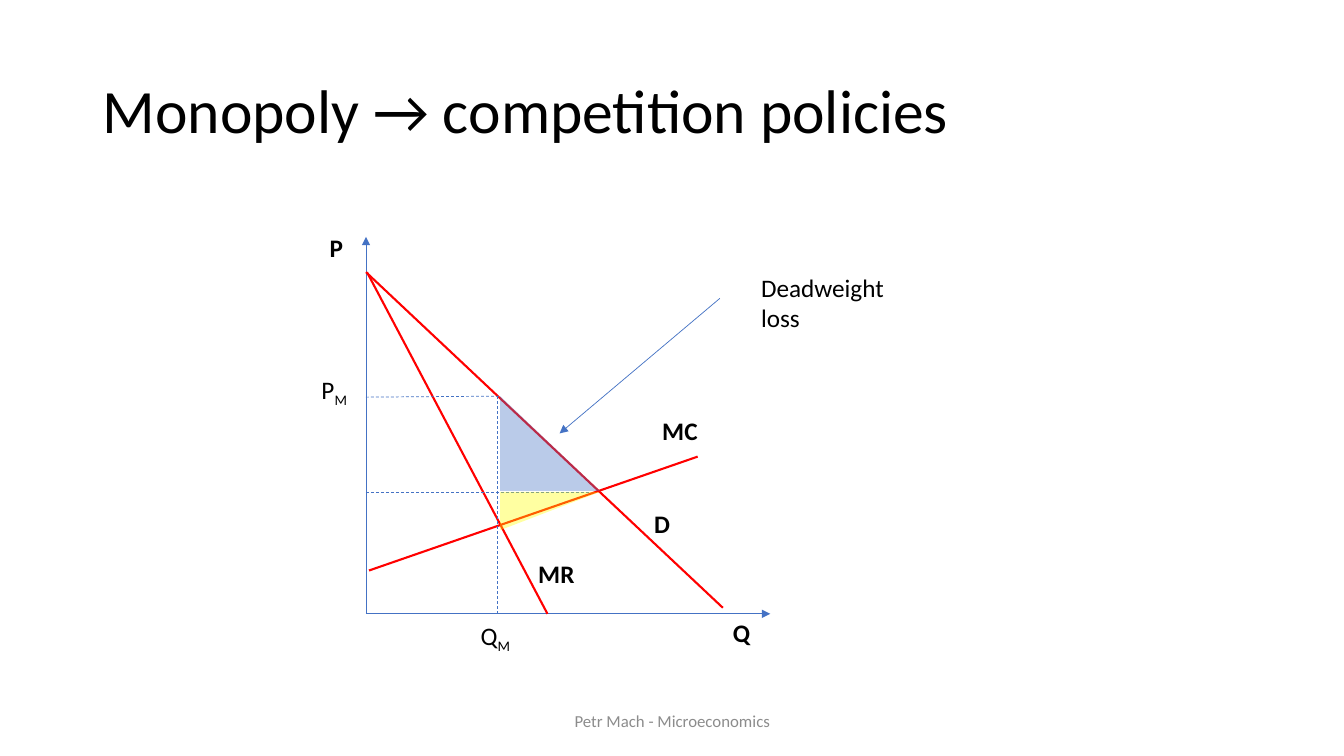
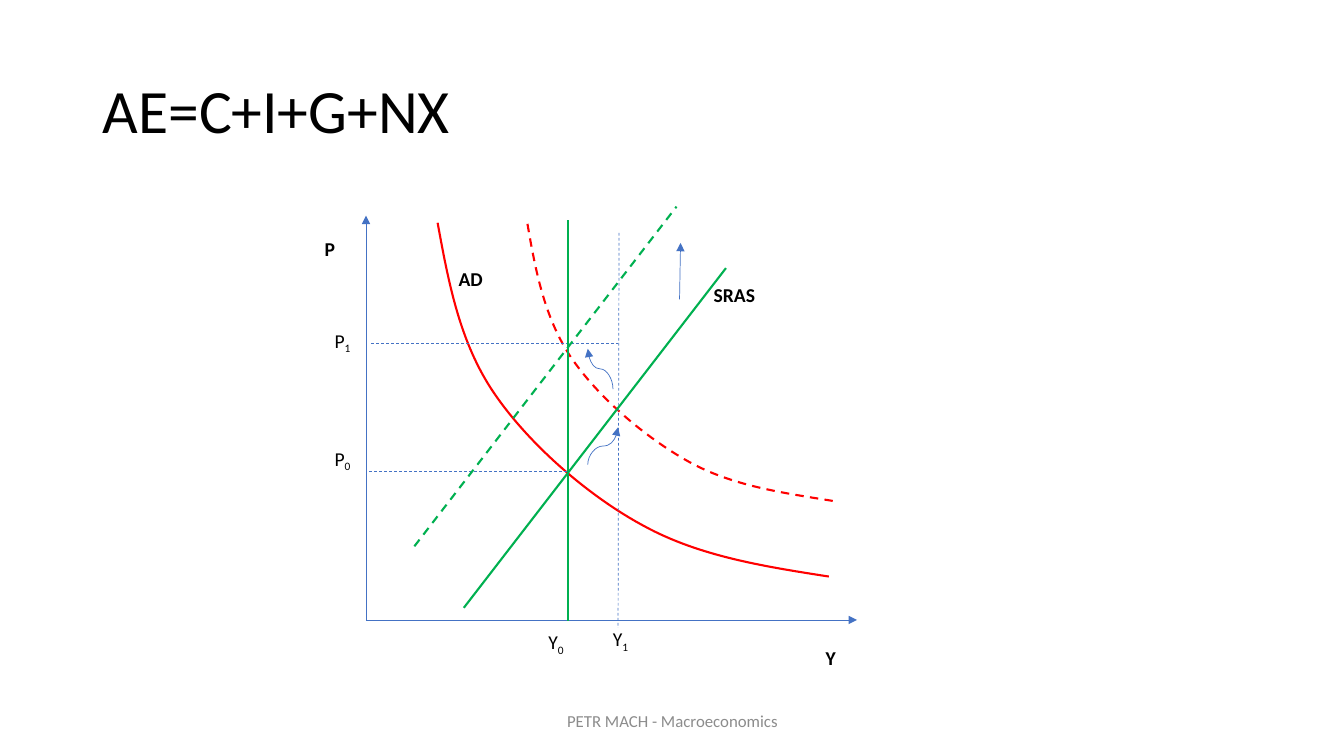
from pptx import Presentation
from pptx.dml.color import RGBColor
from pptx.enum.dml import MSO_LINE_DASH_STYLE as Dash
from pptx.enum.shapes import MSO_CONNECTOR as Link, MSO_SHAPE as Preset
from pptx.enum.text import MSO_ANCHOR as Anchor, PP_ALIGN as Align
from pptx.oxml.ns import qn
from pptx.util import Inches, Pt
from lxml.etree import SubElement

FONT = "Calibri"
BLACK, WHITE, GRAY = "000000", "FFFFFF", "8C8C8C"
BLUE, RED, GREEN, YELLOW = "4472C4", "FF0000", "00B050", "FFFF00"
THIN, THICK = 0.5, 1.5


def rgb(color):
    """Turn a hex string into a colour."""
    return RGBColor.from_string(color)


def add_text(slide, text, left, top, width, height, size=18, color=BLACK, bold=False,
             align=Align.LEFT, anchor=Anchor.TOP, spacing=1.0, fill=None):
    """Write one paragraph; what follows an underscore is a subscript."""
    box = slide.shapes.add_textbox(*map(Inches, (left, top, width, height)))
    if fill:
        box.fill.solid()
        box.fill.fore_color.rgb = rgb(fill)
    frame = box.text_frame
    frame.word_wrap = True
    frame.vertical_anchor = anchor
    paragraph = frame.paragraphs[0]
    paragraph.alignment = align
    paragraph.line_spacing = spacing
    for level, part in enumerate(text.split("_")):
        run = paragraph.add_run()
        run.text = part
        run.font.name, run.font.size, run.font.bold = FONT, Pt(size), bold
        run.font.color.rgb = rgb(color)
        if level:
            run.font._element.set("baseline", "-25000")


def style_line(line, color, width, dash=None, arrow=False):
    """Set colour, width, dash and arrowhead of a line."""
    line.color.rgb = rgb(color)
    line.width = Pt(width)
    if dash:
        line.dash_style = dash
    if arrow:
        SubElement(line._get_or_add_ln(), qn("a:tailEnd"), type="triangle")


def add_line(slide, start, end, color=BLUE, width=THIN, dash=None, arrow=False, kind=Link.STRAIGHT):
    """Draw a connector between two points."""
    connector = slide.shapes.add_connector(kind, *map(Inches, (*start, *end)))
    style_line(connector.line, color, width, dash, arrow)
    SubElement(connector._element.spPr, qn("a:effectLst"))
    return connector


def add_bent_arrow(slide, start, end):
    """Draw a curved arrow that leaves and arrives vertically."""
    (x1, y1), (x2, y2) = start, end
    mid_x, mid_y = (x1 + x2) / 2, (y1 + y2) / 2
    half_x, half_y = (y2 - y1) / 2, (x1 - x2) / 2
    arrow = add_line(slide, (mid_x - half_x, mid_y - half_y), (mid_x + half_x, mid_y + half_y),
                     arrow=True, kind=Link.CURVE)
    arrow._element.spPr.find(qn("a:xfrm")).set("rot", "5400000")


def add_curve(slide, points, color, dash=None):
    """Draw a chain of cubic curves as one open outline."""
    start, *rest = [tuple(map(Inches, point)) for point in points]
    builder = slide.shapes.build_freeform(*start)
    builder.add_line_segments(rest, close=False)
    curve = builder.convert_to_shape()
    segments = list(curve._element.spPr.iter(qn("a:lnTo")))
    outline = segments[0].getparent()
    for first in range(0, len(segments), 3):
        cubic = SubElement(outline, qn("a:cubicBezTo"))
        for segment in segments[first:first + 3]:
            cubic.append(segment[0])
            outline.remove(segment)
    curve.shadow.inherit = False
    curve.fill.background()
    style_line(curve.line, color, THICK, dash)


def add_triangle(slide, left, top, width, height, color, flip=False):
    """Shade a right triangle, optionally upside down."""
    area = slide.shapes.add_shape(Preset.RIGHT_TRIANGLE, *map(Inches, (left, top, width, height)))
    area.shadow.inherit = False
    area.fill.solid()
    area.fill.fore_color.rgb = rgb(color)
    area.line.fill.background()
    SubElement(area._element.spPr.find(".//" + qn("a:srgbClr")), qn("a:alpha"), val="37000")
    if flip:
        area._element.spPr.find(qn("a:xfrm")).set("flipV", "1")


def add_axes(slide, origin, top, right):
    """Draw the price and quantity axes."""
    for end in ((origin[0], top), (right, origin[1])):
        add_line(slide, origin, end, arrow=True)


def new_slide(deck, title, footer):
    """Add a slide with the shared title and footer."""
    slide = deck.slides.add_slide(deck.slide_layouts[6])
    add_text(slide, title, 0.92, 0.4, 11.5, 1.45, size=44, anchor=Anchor.MIDDLE, spacing=0.9)
    add_text(slide, footer, 4.42, 6.95, 4.5, 0.4, size=12, color=GRAY,
             align=Align.CENTER, anchor=Anchor.MIDDLE)
    return slide


def build_monopoly(deck):
    """Show the deadweight loss of a monopoly."""
    slide = new_slide(deck, "Monopoly → competition policies", "Petr Mach - Microeconomics")
    for label, left, top, width, height in (
            ("P_M", 3.09, 3.64, 0.69, 0.52), ("MR", 5.24, 5.47, 1, 0.66),
            ("Q_M", 4.67, 6.05, 1.07, 0.58), ("D", 6.39, 4.97, 0.54, 0.52),
            ("MC", 6.47, 4.05, 0.86, 0.52), ("Q", 7.17, 6.05, 0.54, 0.52),
            ("P", 3.17, 2.23, 0.54, 0.52)):
        add_text(slide, label, left, top, width, height, bold="_" not in label,
                 spacing=1.15 if label == "Q_M" else 1.07, fill=WHITE)
    add_axes(slide, (3.63, 6.09), 2.35, 7.64)
    for start, end in (((3.66, 5.66), (6.92, 4.53)), ((3.63, 2.7), (7.17, 6.03)),
                       ((3.64, 2.7), (5.43, 6.09))):
        add_line(slide, start, end, RED, THICK)
    for start, end in (((3.63, 3.94), (4.96, 3.93)), ((4.93, 3.93), (4.93, 6.09)),
                       ((3.63, 4.88), (5.85, 4.88))):
        add_line(slide, start, end, dash=Dash.DASH)
    add_triangle(slide, 4.96, 3.93, 0.99, 0.94, BLUE)
    add_triangle(slide, 4.96, 4.88, 0.99, 0.38, YELLOW, flip=True)
    add_text(slide, "Deadweight loss", 7.45, 2.65, 1.73, 0.71)
    add_line(slide, (7.14, 2.96), (5.55, 4.3), arrow=True)


def build_expenditure(deck):
    """Show a demand shift followed by a supply shift."""
    slide = new_slide(deck, "AE=C+I+G+NX", "PETR MACH - Macroeconomics")
    for label, left, top, width in (("SRAS", 6.98, 2.72, 0.76), ("AD", 4.45, 2.56, 0.58),
                                    ("Y", 8.09, 6.32, 0.91), ("P", 3.12, 2.27, 0.62)):
        add_text(slide, label, left, top, width, 0.38, size=14, bold=True, spacing=1.15, fill=WHITE)
    add_axes(slide, (3.63, 6.15), 2.14, 8.5)
    add_curve(slide, [(8.22, 5.72), (7.58, 5.62), (6.94, 5.52), (6.39, 5.22), (5.83, 4.92),
                      (5.24, 4.4), (4.9, 3.9), (4.56, 3.4), (4.45, 2.81), (4.34, 2.21)], RED)
    add_curve(slide, [(8.26, 4.97), (7.76, 4.89), (7.26, 4.82), (6.83, 4.58), (6.4, 4.34),
                      (5.93, 3.94), (5.66, 3.54), (5.4, 3.15), (5.31, 2.68), (5.23, 2.21)],
              RED, Dash.DASH)
    for label, left, top, width, height in (
            ("P_0", 3.22, 4.34, 0.6, 0.46), ("P_1", 3.22, 3.17, 0.6, 0.46),
            ("Y_0", 5.34, 6.16, 0.84, 0.54), ("Y_1", 5.98, 6.13, 0.84, 0.54)):
        add_text(slide, label, left, top, width, height, size=14, spacing=1.15)
    for start, end in (((3.66, 4.68), (5.63, 4.68)), ((3.68, 3.41), (6.13, 3.41)),
                       ((6.14, 2.31), (6.13, 6.23))):
        add_line(slide, start, end, dash=Dash.DASH)
    for start, end, dash in (((4.6, 6.03), (7.2, 2.66), None), ((5.63, 6.16), (5.63, 2.18), None),
                             ((4.11, 5.42), (6.71, 2.05), Dash.DASH)):
        add_line(slide, start, end, GREEN, THICK, dash)
    add_line(slide, (6.74, 2.97), (6.75, 2.41), arrow=True)
    add_bent_arrow(slide, (5.83, 4.61), (6.13, 4.24))
    add_bent_arrow(slide, (6.08, 3.86), (5.83, 3.46))


def main():
    """Build and save the deck."""
    deck = Presentation()
    deck.slide_width, deck.slide_height = Inches(13.33), Inches(7.5)
    build_monopoly(deck)
    build_expenditure(deck)
    deck.save("out.pptx")


if __name__ == "__main__":
    main()
